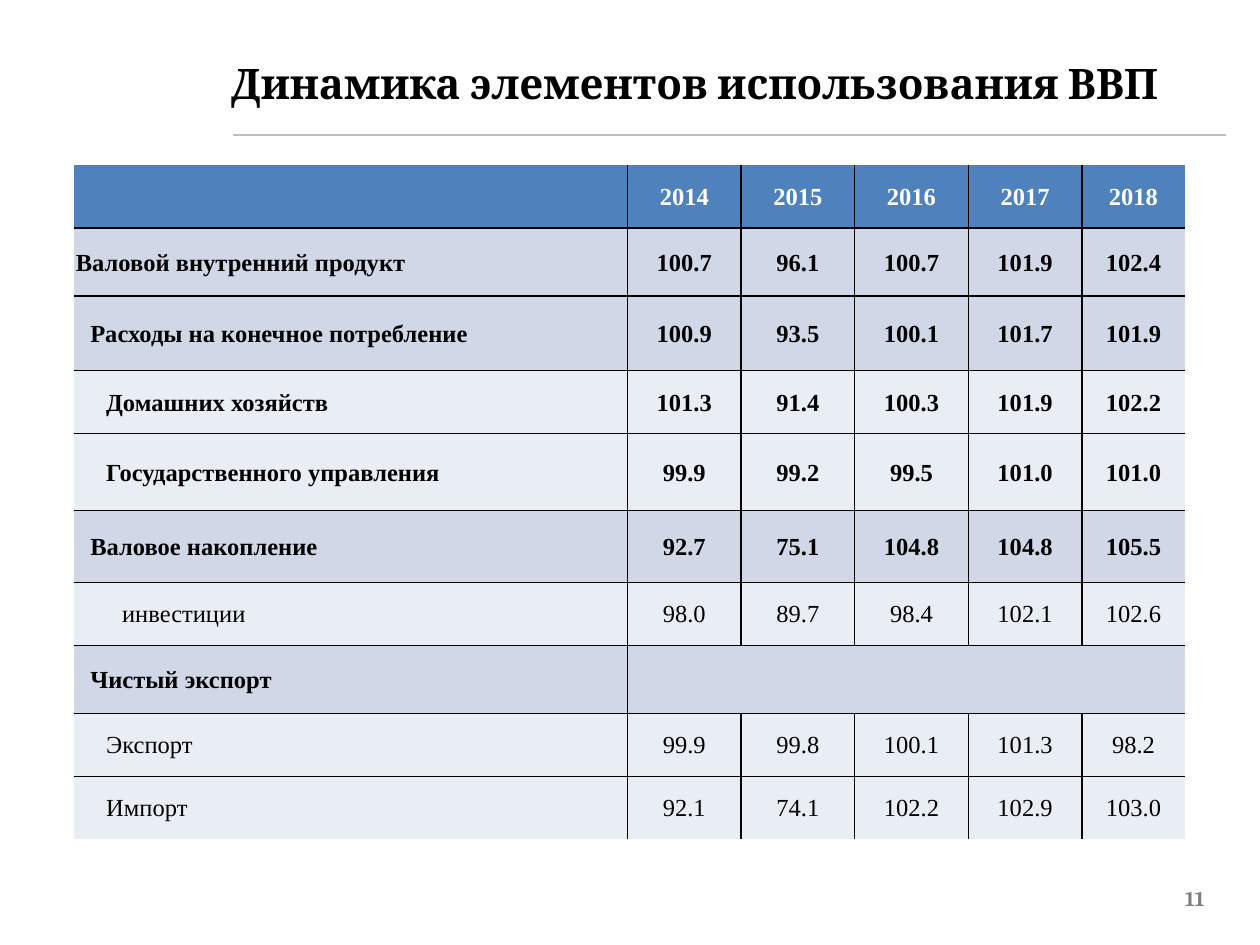
from dataclasses import dataclass

from lxml.etree import SubElement
from pptx import Presentation
from pptx.dml.color import RGBColor
from pptx.enum.shapes import MSO_CONNECTOR
from pptx.enum.text import MSO_ANCHOR, MSO_AUTO_SIZE, PP_ALIGN
from pptx.oxml import parse_xml
from pptx.oxml.ns import nsdecls, qn
from pptx.util import Cm, Pt

HUES = {
    "black": "000000",
    "white": "FFFFFF",
    "head": "4F81BD",
    "dark": "D0D8E8",
    "light": "E9EDF4",
    "rule": "BFBFBF",
    "page": "7F7F7F",
}
WIDTHS = [11.15] + [2.29] * 4 + [2.08]
STEP = 0.32
THIN = 0.03


@dataclass
class Row:
    label: str
    data: str
    height: float
    level: int = 0
    fill: str = "light"
    bold: bool = True
    ink: str = "black"


ROWS = [
    Row("", "2014 2015 2016 2017 2018", 1.27, 0, "head", ink="white"),
    Row("Валовой внутренний продукт", "100.7 96.1 100.7 101.9 102.4", 1.37, 0, "dark"),
    Row("Расходы на конечное потребление", "100.9 93.5 100.1 101.7 101.9", 1.5, 1, "dark"),
    Row("Домашних хозяйств", "101.3 91.4 100.3 101.9 102.2", 1.27, 2),
    Row("Государственного управления", "99.9 99.2 99.5 101.0 101.0", 1.55, 2),
    Row("Валовое накопление", "92.7 75.1 104.8 104.8 105.5", 1.45, 1, "dark"),
    Row("инвестиции", "98.0 89.7 98.4 102.1 102.6", 1.27, 3, bold=False),
    Row("Чистый экспорт", "", 1.37, 1, "dark"),
    Row("Экспорт", "99.9 99.8 100.1 101.3 98.2", 1.27, 2, bold=False),
    Row("Импорт", "92.1 74.1 102.2 102.9 103.0", 1.27, 2, bold=False),
]


def tint(name: str) -> RGBColor:
    return RGBColor.from_string(HUES[name])


def style(frame, face: str, size: int, ink: str, align, bold: bool = True) -> None:
    para = frame.paragraphs[0]
    para.alignment = align
    for run in para.runs:
        font = run.font
        font.name, font.size, font.bold = face, Pt(size), bold
        font.color.rgb = tint(ink)


def edge(cell, sides: dict) -> None:
    props = cell._tc.get_or_add_tcPr()
    for spot, (side, shown) in enumerate(sides.items()):
        fill = "<a:noFill/>"
        if shown:
            fill = f'<a:solidFill><a:srgbClr val="{HUES["black"]}"/></a:solidFill>'
        line = f'<a:ln{side} {nsdecls("a")} w="{Pt(1)}">{fill}</a:ln{side}>'
        props.insert(spot, parse_xml(line))


def put(cell, text: str, row: Row, left: float, align) -> None:
    cell.fill.solid()
    cell.fill.fore_color.rgb = tint(row.fill)
    cell.vertical_anchor = MSO_ANCHOR.MIDDLE
    cell.margin_left = Cm(left)
    cell.margin_right = cell.margin_top = Cm(THIN)
    cell.margin_bottom = 0
    if text:
        cell.text_frame.text = text
        style(cell.text_frame, "Times New Roman", 14, row.ink, align, row.bold)


def draw_grid(slide) -> None:
    high = sum(row.height for row in ROWS)
    grid = slide.shapes.add_table(
        len(ROWS), len(WIDTHS), Cm(1.5), Cm(3.33), Cm(sum(WIDTHS)), Cm(high)
    ).table
    for col, width in zip(grid.columns, WIDTHS):
        col.width = Cm(width)
    last = len(WIDTHS) - 1
    for y, row in enumerate(ROWS):
        grid.rows[y].height = Cm(row.height)
        nums = row.data.split()
        if not nums:
            grid.cell(y, 1).merge(grid.cell(y, last))
        texts = [row.label] + (nums or [""])
        for x, text in enumerate(texts):
            cell = grid.cell(y, x)
            left = max(THIN, row.level * STEP) if x == 0 else THIN
            align = PP_ALIGN.CENTER if x else PP_ALIGN.LEFT
            put(cell, text, row, left, align)
            edge(cell, {
                "L": x > 0,
                "R": x < len(texts) - 1,
                "T": y > 0,
                "B": y < len(ROWS) - 1,
            })


def draw_title(slide) -> None:
    title = slide.shapes.title
    title.left, title.top = Cm(2.87), Cm(1.04)
    title.width, title.height = Cm(21), Cm(1.27)
    frame = title.text_frame
    frame.text = "Динамика элементов использования ВВП"
    frame.word_wrap = True
    frame.auto_size = MSO_AUTO_SIZE.NONE
    frame.vertical_anchor = MSO_ANCHOR.MIDDLE
    style(frame, "Cambria", 24, "black", PP_ALIGN.CENTER)
    props = frame.paragraphs[0]._p.get_or_add_pPr()
    props.set("marL", "0")
    props.set("indent", str(Cm(1.27)))


def draw_rule(slide) -> None:
    rule = slide.shapes.add_connector(
        MSO_CONNECTOR.STRAIGHT, Cm(4.7), Cm(2.72), Cm(24.71), Cm(2.72)
    )
    rule.line.color.rgb = tint("rule")
    rule.line.width = Pt(1)
    SubElement(rule._element.spPr, qn("a:effectLst"))


def draw_page(slide) -> None:
    box = slide.shapes.add_textbox(Cm(23.06), Cm(17.93), Cm(1.22), Cm(0.36))
    frame = box.text_frame
    frame.text = "11"
    frame.word_wrap = True
    frame.vertical_anchor = MSO_ANCHOR.MIDDLE
    frame.margin_left = frame.margin_right = 0
    frame.margin_top = frame.margin_bottom = 0
    style(frame, "Cambria", 12, "page", PP_ALIGN.RIGHT)


def main() -> None:
    deck = Presentation()
    deck.slide_width, deck.slide_height = Cm(25.4), Cm(19.05)
    slide = deck.slides.add_slide(deck.slide_layouts[5])
    draw_rule(slide)
    draw_page(slide)
    draw_grid(slide)
    draw_title(slide)
    deck.save("out.pptx")


if __name__ == "__main__":
    main()
